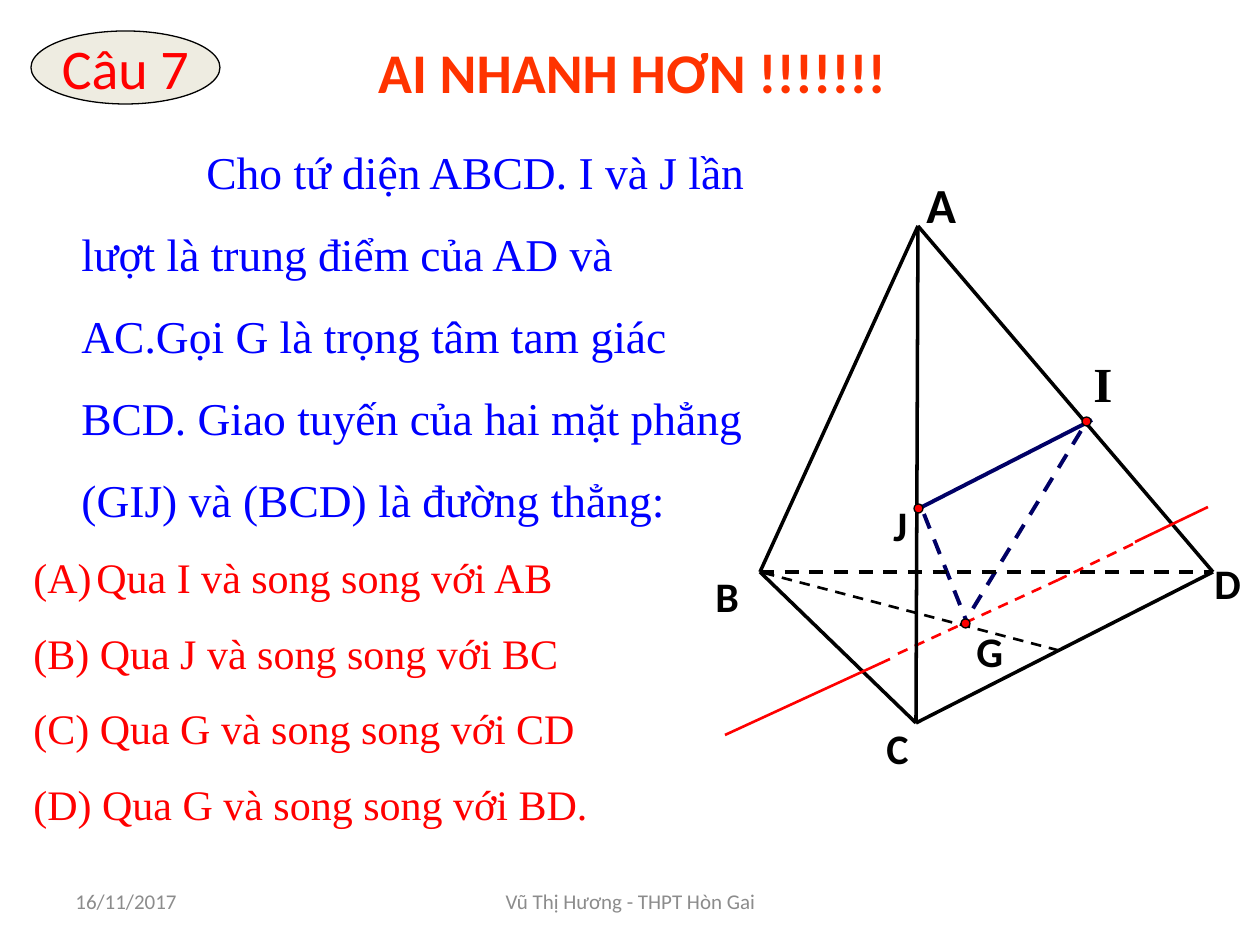
"""Build a geometry quiz slide: a tetrahedron ABCD with four answer choices."""
from lxml.etree import SubElement
from pptx import Presentation
from pptx.dml.color import RGBColor
from pptx.enum.dml import MSO_LINE
from pptx.enum.shapes import MSO_CONNECTOR, MSO_SHAPE
from pptx.enum.text import MSO_ANCHOR, MSO_AUTO_SIZE, PP_ALIGN
from pptx.oxml.ns import qn
from pptx.util import Pt

PX = 914400 / 126
COLORS = {"black": "000000", "red": "FF0000", "blue": "0000FF", "navy": "000066",
          "orange": "FF3300", "cream": "EEECE1", "gray": "8C8C8C"}
SERIF = "Times New Roman"


def write(shape, text, size, color="black", font="Calibri", bold=False, align=PP_ALIGN.LEFT,
          anchor=MSO_ANCHOR.TOP, wrap=True, spacing=None, margin=0, indent=0, numbering=None):
    """Write one formatted paragraph into a shape, after any text it already holds."""
    frame = shape.text_frame
    frame.word_wrap = wrap
    frame.auto_size = MSO_AUTO_SIZE.NONE
    frame.vertical_anchor = anchor
    paragraph = frame.add_paragraph() if frame.text else frame.paragraphs[0]
    paragraph.alignment = align
    if spacing:
        paragraph.line_spacing = spacing
    properties = paragraph._p.get_or_add_pPr()
    properties.set("marL", str(round(margin * PX)))
    properties.set("indent", str(round(indent * PX)))
    if numbering:
        SubElement(properties, qn("a:buAutoNum"), type=numbering)
    run = paragraph.add_run()
    run.text = text
    run.font.size = Pt(size)
    run.font.name = font
    run.font.bold = bold
    run.font.color.rgb = RGBColor.from_string(COLORS[color])


def px(*lengths):
    """Turn pixel lengths into EMU."""
    return [round(length * PX) for length in lengths]


presentation = Presentation()
presentation.slide_width, presentation.slide_height = px(1260, 945)
slide = presentation.slides.add_slide(presentation.slide_layouts[5])
shapes = slide.shapes

heading = shapes.title
heading.left, heading.top, heading.width, heading.height = px(158, 31, 949, 108)
write(heading, "AI NHANH HƠN !!!!!!!", 32, color="orange", bold=True, align=PP_ALIGN.CENTER)

question = shapes.add_textbox(*px(21, 111, 746, 732))
write(question, "Cho tứ diện ABCD. I và J lần lượt là trung điểm của AD và AC.Gọi G là trọng tâm "
      "tam giác BCD. Giao tuyến của hai mặt phẳng (GIJ) và (BCD) là đường thẳng:",
      26, color="blue", font=SERIF, spacing=1.5, margin=48, indent=125)
write(question, "Qua I và song song với AB", 24, color="red", font=SERIF, spacing=1.5,
      margin=63, indent=-63, numbering="alphaUcParenBoth")
for choice in ("(B) Qua J và song song với BC",
               "(C) Qua G và song song với CD",
               "(D) Qua G và song song với BD."):
    write(question, choice, 24, color="red", font=SERIF, spacing=1.5)

A, B, C, D = (918, 226), (760, 572), (916, 723), (1213, 572)
I, J, G = (1086, 421), (918, 508), (965, 623)

segments = [
    ((1092, 420), (920, 508), "navy", 2.25, False),
    ((764, 573), (1061, 651), "black", 1.5, True),
    ((1058, 580), (893, 656), "red", 1.5, True),
    ((924, 514), (966, 620), "navy", 2.25, True),
    ((1081, 431), (966, 620), "navy", 2.25, True),
    (B, D, "black", 2, True),
    (B, C, "black", 2, False),
    (D, C, "black", 2, False),
    (A, B, "black", 2, False),
    (A, C, "black", 2, False),
    (A, D, "black", 2, False),
    ((890, 659), (725, 735), "red", 1.5, False),
    ((1133, 544), (1058, 580), "red", 1.5, True),
    ((1208, 507), (1135, 542), "red", 1.5, False),
]
for start, end, color, width, dashed in segments:
    segment = shapes.add_connector(MSO_CONNECTOR.STRAIGHT, *px(*start, *end))
    segment.line.color.rgb = RGBColor.from_string(COLORS[color])
    segment.line.width = Pt(width)
    if dashed:
        segment.line.dash_style = MSO_LINE.DASH
    SubElement(segment._element.spPr, qn("a:effectLst"))

badge_box = (31, 31, 189, 73)
ovals = [(badge_box, "cream", 0.75)]
ovals += [((x - 4, y - 4, 9, 9), "red", 0) for x, y in (G, J, I)]
for box, color, width in ovals:
    oval = shapes.add_shape(MSO_SHAPE.OVAL, *px(*box))
    oval.shadow.inherit = False
    oval.fill.solid()
    oval.fill.fore_color.rgb = RGBColor.from_string(COLORS[color])
    oval.line.color.rgb = RGBColor.from_string(COLORS["black"])
    oval.line.width = Pt(width)
    if box == badge_box:
        write(oval, "Câu 7", 32, color="red", align=PP_ALIGN.CENTER,
              anchor=MSO_ANCHOR.MIDDLE, wrap=False)

point_labels = [
    ("A", (914, 168, 78, 95), 28, "Calibri"),
    ("B", (703, 564, 78, 83), 24, "Calibri"),
    ("C", (874, 716, 78, 83), 24, "Calibri"),
    ("D", (1202, 551, 78, 83), 24, "Calibri"),
    ("I", (1081, 347, 63, 72), 28, SERIF),
    ("J", (881, 493, 32, 63), 24, "Calibri"),
    ("G", (964, 619, 63, 63), 24, "Calibri"),
]
for letter, box, size, font in point_labels:
    write(shapes.add_textbox(*px(*box)), letter, size, font=font, bold=True)

footers = [("16/11/2017", (63, 876, 294, 50), PP_ALIGN.LEFT),
           ("Vũ Thị Hương - THPT Hòn Gai", (431, 876, 399, 50), PP_ALIGN.CENTER)]
for text, box, align in footers:
    write(shapes.add_textbox(*px(*box)), text, 12, color="gray", align=align,
          anchor=MSO_ANCHOR.MIDDLE)

presentation.save("out.pptx")
